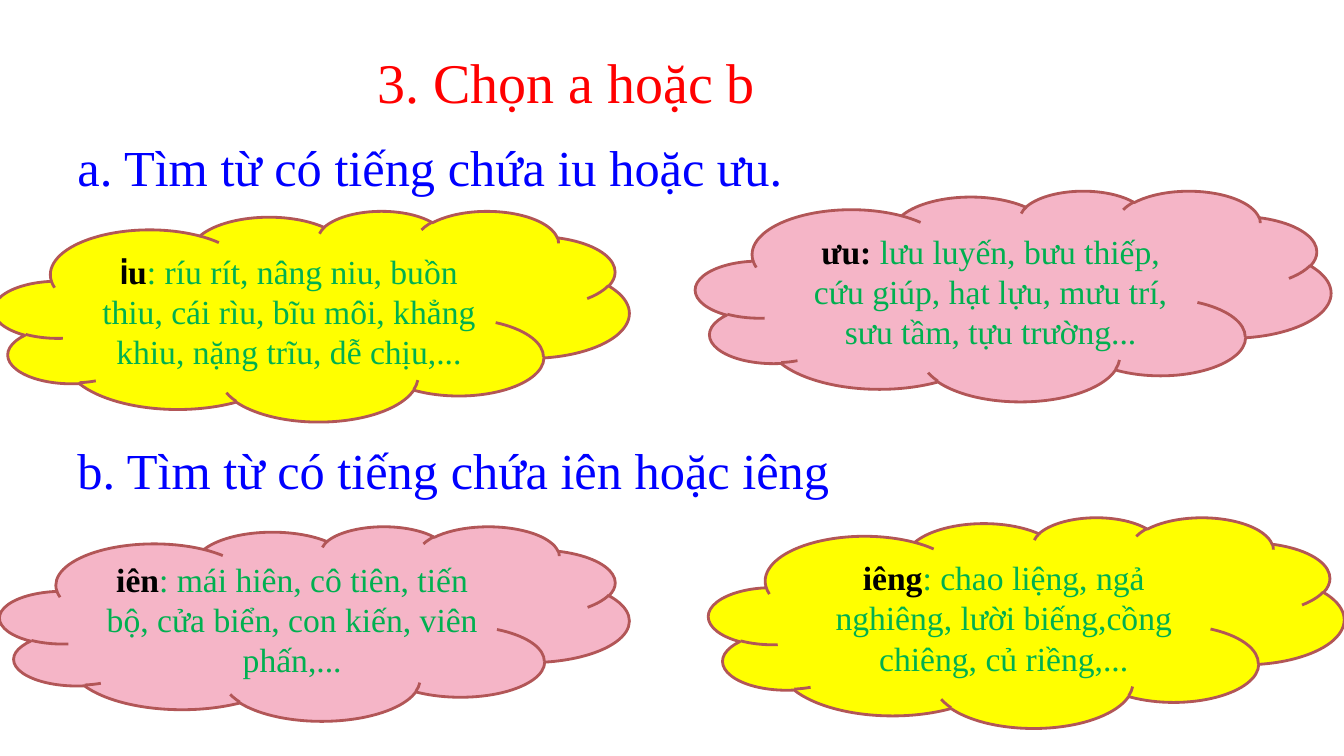
from dataclasses import dataclass

from pptx import Presentation
from pptx.dml.color import RGBColor
from pptx.enum.shapes import MSO_SHAPE
from pptx.enum.text import MSO_ANCHOR, MSO_AUTO_SIZE, PP_ALIGN
from pptx.util import Inches, Pt


@dataclass(frozen=True)
class Theme:
    red: str = "FF0000"
    blue: str = "0000FF"
    black: str = "000000"
    green: str = "00B050"
    yellow: str = "FFFF00"
    pink: str = "F5B5C7"
    edge: str = "B25657"
    serif: str = "Times New Roman"
    sans: str = "TeX Gyre Adventor"
    title: int = 40
    head: int = 36
    body: int = 24


THEME = Theme()


def add_text(para, text, size=THEME.body, color=THEME.black, bold=False, font=THEME.serif):
    run = para.add_run()
    run.text = text
    run.font.name = font
    run.font.size = Pt(size)
    run.font.bold = bold
    run.font.color.rgb = RGBColor.from_string(color)


def set_frame(shape, align):
    frame = shape.text_frame
    frame.word_wrap = True
    frame.auto_size = MSO_AUTO_SIZE.NONE
    frame.vertical_anchor = MSO_ANCHOR.MIDDLE
    para = frame.paragraphs[0]
    para.alignment = align
    return para


def add_title(slide, box, text):
    title = slide.shapes.title
    title.left, title.top, title.width, title.height = map(Inches, box)
    para = set_frame(title, PP_ALIGN.CENTER)
    add_text(para, text, size=THEME.title, color=THEME.red)


def add_head(slide, box, text):
    shape = slide.shapes.add_textbox(*map(Inches, box))
    para = set_frame(shape, PP_ALIGN.LEFT)
    para.line_spacing = 0.9
    add_text(para, text, size=THEME.head, color=THEME.blue)


def add_cloud(slide, box, fill, keys, words):
    """Place a cloud; keys pairs each piece of the bold sound with its font."""
    cloud = slide.shapes.add_shape(MSO_SHAPE.CLOUD, *map(Inches, box))
    cloud.shadow.inherit = False
    cloud.fill.solid()
    cloud.fill.fore_color.rgb = RGBColor.from_string(fill)
    cloud.line.color.rgb = RGBColor.from_string(THEME.edge)
    cloud.line.width = Pt(2)
    para = set_frame(cloud, PP_ALIGN.CENTER)
    for key, font in keys:
        add_text(para, key, bold=True, font=font)
    add_text(para, words, color=THEME.green)


def main():
    deck = Presentation()
    deck.slide_width, deck.slide_height = Inches(13.33), Inches(7.5)
    slide = deck.slides.add_slide(deck.slide_layouts[5])
    add_title(slide, (0.86, 0.31, 9.51, 0.98), "3. Chọn a hoặc b")

    # Part a
    add_head(slide, (0.67, 1.29, 11.5, 0.8), "a. Tìm từ có tiếng chứa iu hoặc ưu.")
    add_cloud(slide, (-0.06, 2.09, 6.3, 2.09), THEME.yellow,
              [("i", THEME.sans), ("u", THEME.serif)],
              ": ríu rít, nâng niu, buồn thiu, cái rìu, bĩu môi, "
              "khẳng khiu, nặng trĩu, dễ chịu,...")
    add_cloud(slide, (6.9, 1.89, 6.3, 2.09), THEME.pink, [("ưu: ", THEME.serif)],
              "lưu luyến, bưu thiếp, cứu giúp, hạt lựu, mưu trí, "
              "sưu tầm, tựu trường...")

    # Part b
    add_head(slide, (0.67, 4.18, 11.5, 1.03), "b. Tìm từ có tiếng chứa iên hoặc iêng")
    add_cloud(slide, (0, 5.22, 6.24, 1.93), THEME.pink, [("iên", THEME.serif)],
              ": mái hiên, cô tiên, tiến bộ, cửa biển, con kiến, viên phấn,...")
    add_cloud(slide, (7.03, 5.13, 6.3, 2.09), THEME.yellow, [("iêng", THEME.serif)],
              ": chao liệng, ngả nghiêng, lười biếng,cồng chiêng, củ riềng,...")

    deck.save("out.pptx")


if __name__ == "__main__":
    main()
